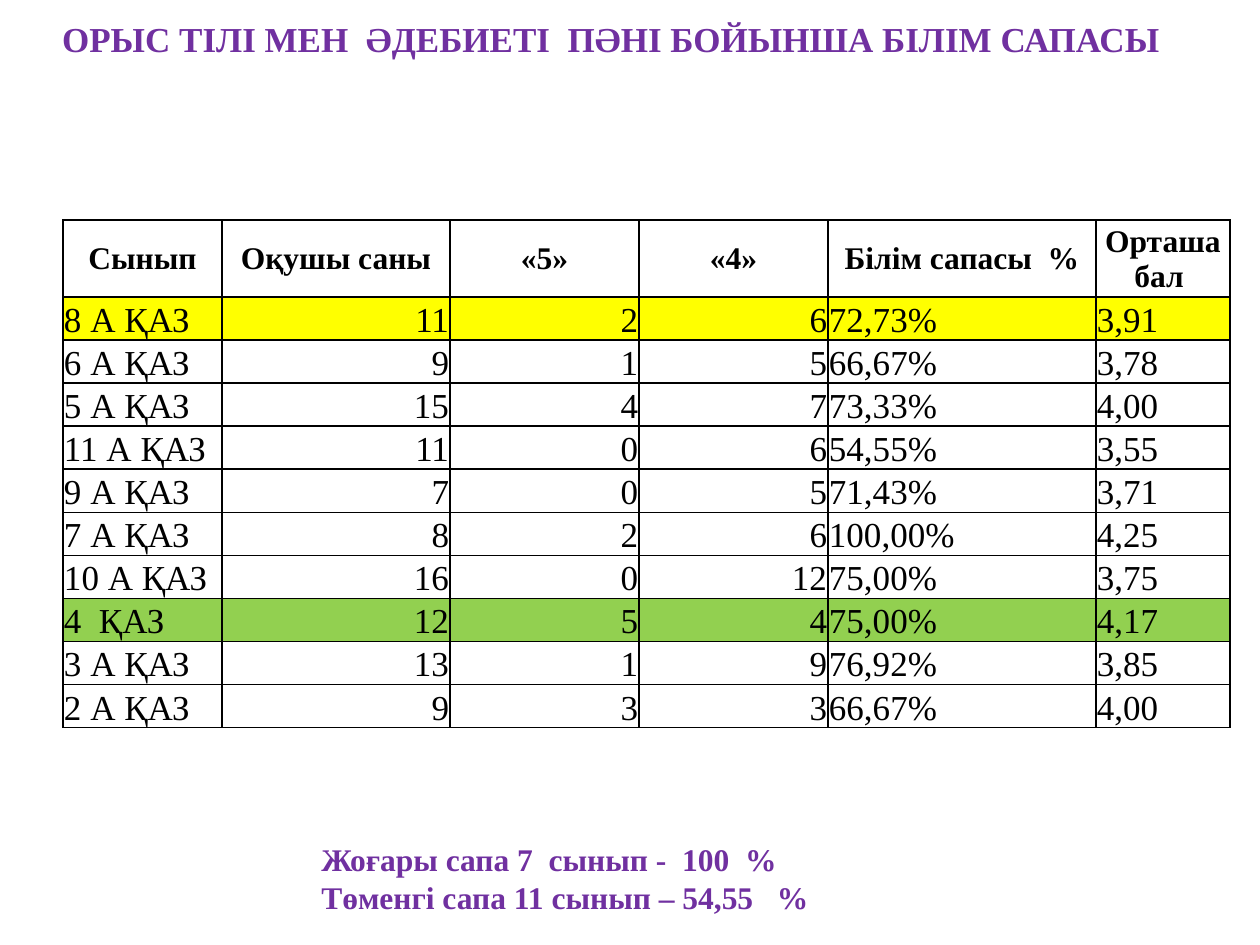
from lxml.etree import SubElement
from pptx import Presentation
from pptx.dml.color import RGBColor
from pptx.enum.text import MSO_ANCHOR as Anchor, PP_ALIGN as Align
from pptx.oxml.ns import qn
from pptx.util import Pt

TITLE = "ОРЫС ТІЛІ МЕН  ӘДЕБИЕТІ  ПӘНІ БОЙЫНША БІЛІМ САПАСЫ"
SUMMARY = ["Жоғары сапа 7  сынып -  100  %", "Төменгі сапа 11 сынып – 54,55   %"]
HEADERS = ["Сынып", "Оқушы саны", "«5»", "«4»", "Білім сапасы  %", "Орташа бал "]
RESULTS = [
    ("8 А ҚАЗ", "11", "2", "6", "72,73%", "3,91"),
    ("6 А ҚАЗ", "9", "1", "5", "66,67%", "3,78"),
    ("5 А ҚАЗ", "15", "4", "7", "73,33%", "4,00"),
    ("11 А ҚАЗ", "11", "0", "6", "54,55%", "3,55"),
    ("9 А ҚАЗ", "7", "0", "5", "71,43%", "3,71"),
    ("7 А ҚАЗ", "8", "2", "6", "100,00%", "4,25"),
    ("10 А ҚАЗ", "16", "0", "12", "75,00%", "3,75"),
    ("4  ҚАЗ", "12", "5", "4", "75,00%", "4,17"),
    ("3 А ҚАЗ", "13", "1", "9", "76,92%", "3,85"),
    ("2 А ҚАЗ", "9", "3", "3", "66,67%", "4,00"),
]
ROW_FILLS = {"8 А ҚАЗ": "FFFF00", "4  ҚАЗ": "92D050"}
COLUMN_WIDTHS = [159, 228, 189, 189, 268, 134]
COLUMN_ALIGNS = [Align.LEFT] + [Align.RIGHT] * 3 + [Align.LEFT] * 2
HEADER_HEIGHT, ROW_HEIGHT = 77, 43
TABLE_LEFT, TABLE_TOP = 63, 220
PURPLE, BLACK, WHITE = "7030A0", "000000", "FFFFFF"
FONT = "Times New Roman"
CELL_MARGINS = {"margin_left": 1, "margin_right": 1, "margin_top": 1, "margin_bottom": 0}


def px(length):
    """Convert pixels to EMU."""
    return round(length * 914400 / 126)


def color(value):
    """Turn a hex string into a colour."""
    return RGBColor.from_string(value)


def set_values(target, values):
    """Set attributes from a dict of format values."""
    for name, value in values.items():
        setattr(target, name, value)


def write(frame, lines, align, size, bold, text_color):
    """Fill a text frame with one formatted paragraph per line."""
    for index, line in enumerate(lines):
        paragraph = frame.add_paragraph() if index else frame.paragraphs[0]
        paragraph.alignment = align
        run = paragraph.add_run()
        run.text = line
        set_values(run.font, {"name": FONT, "size": Pt(size), "bold": bold})
        run.font.color.rgb = color(text_color)


def add_text(slide, box, lines, align, size, anchor):
    """Add a wrapped purple text box."""
    frame = slide.shapes.add_textbox(*map(px, box)).text_frame
    set_values(frame, {"word_wrap": True, "vertical_anchor": anchor})
    write(frame, lines, align, size, True, PURPLE)


def add_borders(cell):
    """Draw thin black lines on all sides of a cell."""
    properties = cell._tc.get_or_add_tcPr()
    for index, side in enumerate(("lnL", "lnR", "lnT", "lnB")):
        line = properties.makeelement(qn(f"a:{side}"), {"w": str(Pt(1))})
        fill = SubElement(line, qn("a:solidFill"))
        SubElement(fill, qn("a:srgbClr"), val=BLACK)
        properties.insert(index, line)


def add_results_table(slide):
    """Add the table of results by class."""
    heights = [HEADER_HEIGHT] + [ROW_HEIGHT] * len(RESULTS)
    box = (TABLE_LEFT, TABLE_TOP, sum(COLUMN_WIDTHS), sum(heights))
    table = slide.shapes.add_table(len(heights), len(HEADERS), *map(px, box)).table
    set_values(table, {"first_row": False, "horz_banding": False})
    for column, width in zip(table.columns, COLUMN_WIDTHS):
        column.width = px(width)
    for row, height, values in zip(table.rows, heights, [HEADERS, *RESULTS]):
        row.height = px(height)
        header = values is HEADERS
        for cell, value, align in zip(row.cells, values, COLUMN_ALIGNS):
            set_values(cell, {name: px(margin) for name, margin in CELL_MARGINS.items()})
            cell.vertical_anchor = Anchor.MIDDLE if header else Anchor.BOTTOM
            cell.fill.solid()
            cell.fill.fore_color.rgb = color(ROW_FILLS.get(values[0], WHITE))
            write(cell.text_frame, [value], Align.CENTER if header else align,
                  18 if header else 20, header, BLACK)
            add_borders(cell)


def main():
    """Build and save the slide."""
    presentation = Presentation()
    set_values(presentation, {"slide_width": px(1260), "slide_height": px(945)})
    slide = presentation.slides.add_slide(presentation.slide_layouts[6])
    add_text(slide, (44, -4, 1134, 86), [TITLE], Align.CENTER, 20, Anchor.MIDDLE)
    add_text(slide, (309, 834, 630, 127), SUMMARY, Align.LEFT, 18, Anchor.TOP)
    add_results_table(slide)
    presentation.save("out.pptx")


if __name__ == "__main__":
    main()
